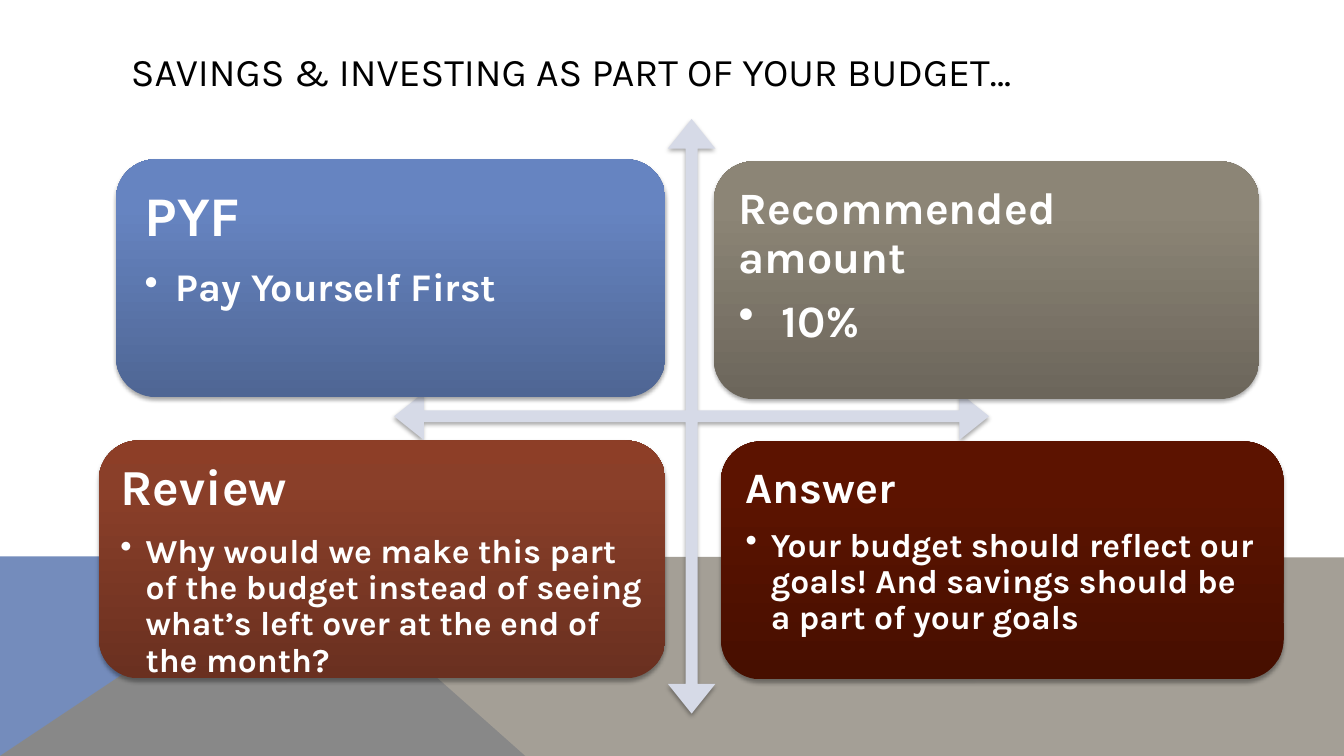
from dataclasses import dataclass

from lxml import etree
from pptx import Presentation, util as u
from pptx.dml.color import RGBColor
from pptx.enum import shapes, text
from pptx.oxml.ns import qn


@dataclass(frozen=True)
class Theme:
    """Colours, font and type sizes of the slide."""
    font: str = "Karla"
    title_size: int = 28
    ink: str = "000000"
    white: str = "FFFFFF"
    arrow: str = "D6DAE7"
    floor_blue: str = "748CBC"
    floor_taupe: str = "8E887C"
    blue: tuple = ("4F6694", "6684C1", "6584C3")
    taupe: tuple = ("6C665B", "8C8576", "8D8576")
    rust: tuple = ("6A3020", "8A3F29", "8D3E27")
    maroon: tuple = ("470F00", "5C1300", "5C1400")


class SlideBuilder:
    """Draws the elements of one slide in one theme."""

    def __init__(self, slide, theme):
        self.slide = slide
        self.theme = theme

    def paint(self, shape, color):
        """Give a shape a plain fill and no outline."""
        shape.shadow.inherit = False
        shape.line.fill.background()
        shape.fill.solid()
        shape.fill.fore_color.rgb = RGBColor.from_string(color)

    def cast_shadow(self, shape):
        """Add a soft shadow below a shape."""
        effects = shape._element.spPr.find(qn("a:effectLst"))
        shadow = etree.SubElement(
            effects, qn("a:outerShdw"), blurRad=str(u.Pt(3.1)),
            dist=str(u.Pt(1.8)), dir="5400000", rotWithShape="0")
        color = etree.SubElement(shadow, qn("a:srgbClr"), val=self.theme.ink)
        etree.SubElement(color, qn("a:alpha"), val="35000")

    def shade(self, shape, colors):
        """Fill a shape with three colours from bottom to top."""
        shape.fill.gradient()
        shape.fill.gradient_angle = 90
        stops = shape._element.spPr.find(qn("a:gradFill")).find(qn("a:gsLst"))
        for stop in list(stops):
            stops.remove(stop)
        for position, color in zip((0, 80000, 100000), colors):
            stop = etree.SubElement(stops, qn("a:gs"), pos=str(position))
            etree.SubElement(stop, qn("a:srgbClr"), val=color)

    def add_words(self, paragraph, words, size, color, bold=False):
        """Add one styled run to a paragraph."""
        run = paragraph.add_run()
        run.text = words
        run.font.name = self.theme.font
        run.font.size = u.Pt(size)
        run.font.bold = bold
        run.font.color.rgb = RGBColor.from_string(color)

    def floor(self, points, color, opacity=100):
        """Draw a filled polygon at the foot of the slide."""
        corners = [(u.Inches(x), u.Inches(y)) for x, y in points]
        builder = self.slide.shapes.build_freeform(*corners[0])
        builder.add_line_segments(corners[1:], close=True)
        shape = builder.convert_to_shape()
        self.paint(shape, color)
        fill = shape._element.spPr.find(qn("a:solidFill"))
        etree.SubElement(fill[0], qn("a:alpha"), val=str(opacity * 1000))

    def title(self, words, left, top, width, height):
        """Set the slide title."""
        box = self.slide.shapes.add_textbox(
            *map(u.Inches, (left, top, width, height)))
        frame = box.text_frame
        frame.word_wrap = True
        frame.vertical_anchor = text.MSO_ANCHOR.MIDDLE
        self.add_words(frame.paragraphs[0], words, self.theme.title_size, self.theme.ink)

    def cross(self, left, top, side):
        """Draw the four-way arrow between the cards."""
        shape = self.slide.shapes.add_shape(
            shapes.MSO_SHAPE.QUAD_ARROW, *map(u.Inches, (left, top, side, side)))
        for index, ratio in enumerate((0.02, 0.04, 0.05)):
            shape.adjustments[index] = ratio
        self.paint(shape, self.theme.arrow)
        self.cast_shadow(shape)

    def card(self, left, top, width, colors, heading, bullet, sizes, inset, indent):
        """Draw a rounded card with a heading and one bullet."""
        shape = self.slide.shapes.add_shape(
            shapes.MSO_SHAPE.ROUNDED_RECTANGLE,
            *map(u.Inches, (left, top, width, 2.36)))
        self.paint(shape, colors[0])
        self.shade(shape, colors)
        self.cast_shadow(shape)
        frame = shape.text_frame
        frame.word_wrap = True
        frame.vertical_anchor = text.MSO_ANCHOR.TOP
        frame.margin_left = frame.margin_right = u.Inches(inset)
        frame.margin_top = frame.margin_bottom = u.Inches(inset)
        paragraphs = (frame.paragraphs[0], frame.add_paragraph())
        for paragraph, words, size, gap in zip(
                paragraphs, (heading, bullet), sizes, (0.35, 0.15)):
            paragraph.alignment = text.PP_ALIGN.LEFT
            paragraph.line_spacing = 0.9
            paragraph.space_after = u.Pt(size * gap)
            self.add_words(paragraph, words, size, self.theme.white, bold=True)
        paragraphs[1].level = 1
        properties = paragraphs[1]._p.get_or_add_pPr()
        properties.set("marL", str(u.Inches(indent)))
        properties.set("indent", str(u.Inches(-indent)))
        etree.SubElement(properties, qn("a:buChar"), char="•")


def main():
    """Build and save the budget slide."""
    presentation = Presentation()
    presentation.slide_width = u.Inches(13.33)
    presentation.slide_height = u.Inches(7.5)
    theme = Theme()
    builder = SlideBuilder(
        presentation.slides.add_slide(presentation.slide_layouts[6]), theme)

    builder.floor([(0, 7.5), (0, 5.52), (2.98, 5.52), (5.21, 7.5)], theme.floor_blue)
    builder.floor([(0, 7.5), (2.97, 5.52), (13.33, 5.53), (13.33, 7.5)],
                  theme.floor_taupe, opacity=80)
    builder.title("SAVINGS & INVESTING AS PART OF YOUR BUDGET…", 1.2, 0.4, 10.97, 0.6)
    builder.cross(3.91, 1.18, 5.9)
    builder.card(1.15, 1.58, 5.45, theme.blue, "PYF", "Pay Yourself First",
                 sizes=(40, 28), inset=0.17, indent=0.31)
    builder.card(7.08, 1.6, 5.41, theme.taupe, "Recommended amount", " 10%",
                 sizes=(32, 32), inset=0.13, indent=0.31)
    builder.card(0.98, 4.37, 5.62, theme.rust, "Review",
                 "Why would we make this part of the budget instead of seeing "
                 "what’s left over at the end of the month?",
                 sizes=(36, 24), inset=0.1, indent=0.25)
    builder.card(7.15, 4.38, 5.58, theme.maroon, "Answer",
                 "Your budget should reflect our goals! And savings should be "
                 "a part of your goals",
                 sizes=(31, 24), inset=0.13, indent=0.25)
    presentation.save("out.pptx")


if __name__ == "__main__":
    main()
